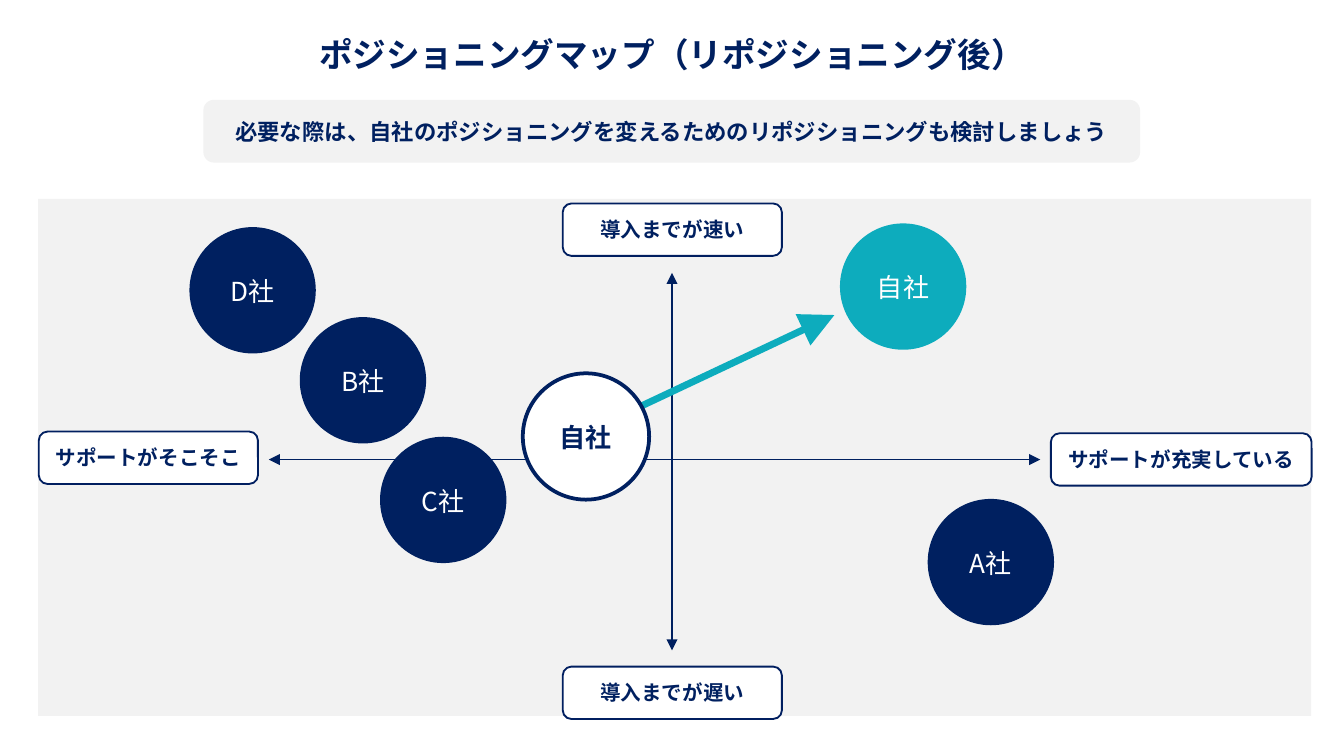
import pptx
import pptx.dml.color
import pptx.enum.shapes
import pptx.enum.text
import pptx.oxml.ns
import pptx.util
from lxml import etree

Pt = pptx.util.Pt
qn = pptx.oxml.ns.qn
SHAPE = pptx.enum.shapes.MSO_SHAPE
FONT = "Noto Sans CJK JP"
COLORS = {
    "navy": "002060",
    "border": "011F60",
    "teal": "0DACBD",
    "gray": "F2F2F2",
    "white": "FFFFFF",
}
DIAMETER = 67.7


def rgb(name):
    return pptx.dml.color.RGBColor.from_string(COLORS[name])


def write_text(sp, text, size=14, color="navy", bold=False, wrap=True, middle=True):
    tf = sp.text_frame
    tf.word_wrap = wrap
    tf.margin_left = tf.margin_right = Pt(7.2)
    tf.margin_top = tf.margin_bottom = Pt(3.6)
    anchor = pptx.enum.text.MSO_ANCHOR
    tf.vertical_anchor = anchor.MIDDLE if middle else anchor.TOP
    p = tf.paragraphs[0]
    p.alignment = pptx.enum.text.PP_ALIGN.CENTER
    r = p.add_run()
    r.text = text
    r.font.name = FONT
    r.font.size = Pt(size)
    r.font.bold = bold
    r.font.color.rgb = rgb(color)
    # Japanese characters take the East Asian font
    ea = etree.SubElement(r.font._element, qn("a:ea"))
    ea.set("typeface", FONT)


def add_shape(s, kind, x, y, w, h, fill, line=None, weight=1):
    sp = s.shapes.add_shape(kind, Pt(x), Pt(y), Pt(w), Pt(h))
    sp.shadow.inherit = False
    sp.fill.solid()
    sp.fill.fore_color.rgb = rgb(fill)
    if line:
        sp.line.color.rgb = rgb(line)
        sp.line.width = Pt(weight)
    else:
        sp.line.fill.background()
    return sp


def add_arrow(s, x1, y1, x2, y2, color="navy", weight=0.75, size="med", both=True):
    sp = s.shapes.add_connector(
        pptx.enum.shapes.MSO_CONNECTOR.STRAIGHT, Pt(x1), Pt(y1), Pt(x2), Pt(y2))
    sp.line.color.rgb = rgb(color)
    sp.line.width = Pt(weight)
    ln = sp.line._get_or_add_ln()
    for end in ("a:headEnd", "a:tailEnd") if both else ("a:tailEnd",):
        etree.SubElement(ln, qn(end), type="triangle", w=size, len=size)
    etree.SubElement(sp._element.spPr, qn("a:effectLst"))


def add_axis_label(s, text, x, y, w=117.4):
    sp = add_shape(s, SHAPE.ROUNDED_RECTANGLE, x, y, w, 28.1, "white", "border")
    write_text(sp, text, size=11, bold=True)


def add_company(s, text, x, y, fill="navy", line=None, color="white", bold=False,
                label_width=42.5, wrap=False):
    add_shape(s, SHAPE.OVAL, x, y, DIAMETER, DIAMETER, fill, line, weight=2)
    label = s.shapes.add_textbox(
        Pt(x + (DIAMETER - label_width) / 2), Pt(y + 22.3), Pt(label_width), Pt(24.5))
    write_text(label, text, color=color, bold=bold, wrap=wrap, middle=False)


def main():
    prs = pptx.Presentation()
    prs.slide_width, prs.slide_height = Pt(720), Pt(405)
    s = prs.slides.add_slide(prs.slide_layouts[5])

    # Title and key message
    title = s.shapes.title
    title.left, title.top, title.width, title.height = Pt(162), Pt(14.4), Pt(396), Pt(28.8)
    write_text(title, "ポジショニングマップ（リポジショニング後）", size=18, bold=True)
    message = add_shape(s, SHAPE.ROUNDED_RECTANGLE, 109, 53.5, 501.8, 33.6, "gray")
    write_text(message, "必要な際は、自社のポジショニングを変えるためのリポジショニングも検討しましょう",
               size=12, bold=True)

    # Map area and axes
    add_shape(s, SHAPE.RECTANGLE, 20.4, 106.6, 682, 277, "gray")
    add_arrow(s, 144, 246.2, 557.3, 246.2)
    add_arrow(s, 360, 348.5, 360, 146.2)

    # Competitors
    for name, x, y in (("D社", 101.5, 121.7), ("B社", 160.6, 169.9),
                       ("C社", 203.6, 234), ("A社", 497, 267.3)):
        add_company(s, name, x, y, label_width=38.9, wrap=True)

    # Own company, moving from the old position to the new one
    add_company(s, "自社", 450, 119.7, fill="teal")
    add_arrow(s, 309.9, 233.4, 447, 168.8, color="teal", weight=3.7, size="lg", both=False)
    add_company(s, "自社", 280.1, 200, fill="white", line="navy", color="navy", bold=True)

    # Axis labels
    add_axis_label(s, "導入までが速い", 301.5, 109)
    add_axis_label(s, "導入までが遅い", 301.5, 357.1)
    add_axis_label(s, "サポートがそこそこ", 20.8, 231.2)
    add_axis_label(s, "サポートが充実している", 563, 232.1, w=139.7)

    prs.save("out.pptx")


if __name__ == "__main__":
    main()
